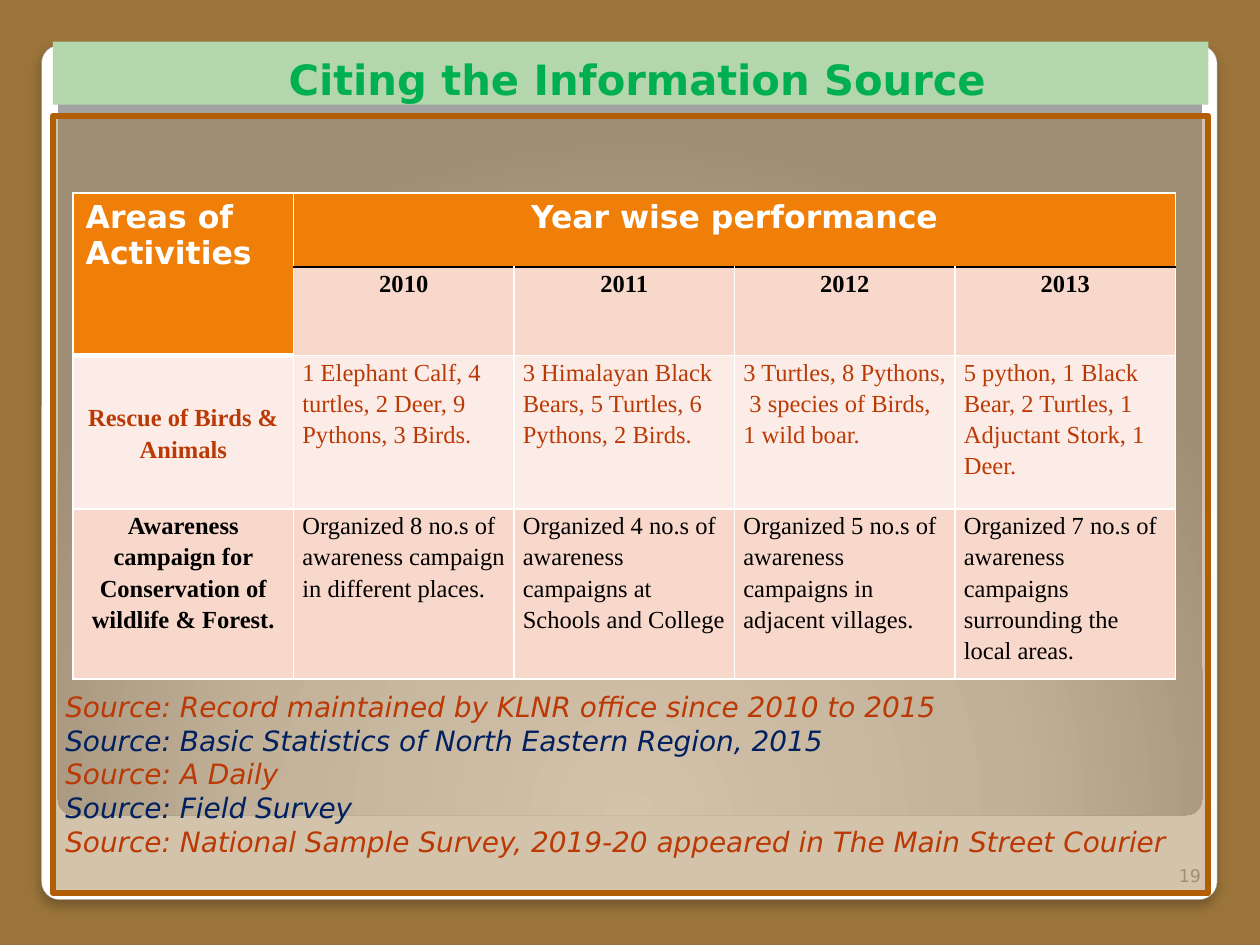
from lxml import etree
from pptx import Presentation
from pptx.dml.color import RGBColor
from pptx.enum import shapes, text
from pptx.oxml import parse_xml
from pptx.oxml.ns import nsdecls, qn
from pptx.util import Inches, Pt

BROWN = RGBColor(0x9A, 0x74, 0x3A)
WHITE = RGBColor(0xFF, 0xFF, 0xFF)
BLACK = RGBColor(0, 0, 0)
GRAY = RGBColor(0xA4, 0xA4, 0xA4)
NUMBER = RGBColor(0xA8, 0xA4, 0x9B)
MINT = RGBColor(0xB3, 0xD6, 0xAC)
GREEN = RGBColor(0x00, 0xB0, 0x50)
FRAME = RGBColor(0xB2, 0x5E, 0x07)
ORANGE = RGBColor(0xF0, 0x7F, 0x09)
PEACH = RGBColor(0xF9, 0xD8, 0xCC)
PALE = RGBColor(0xFC, 0xEC, 0xE7)
RUST = RGBColor(0xBB, 0x39, 0x05)
NAVY = RGBColor(0x00, 0x20, 0x60)
SANS, SERIF = "DejaVu Sans", "Times New Roman"
CENTER, LEFT = text.PP_ALIGN.CENTER, text.PP_ALIGN.LEFT

YEARS = ["2010", "2011", "2012", "2013"]
RESCUE = [
    "Rescue of Birds & Animals",
    "1 Elephant Calf, 4 turtles, 2 Deer, 9 Pythons, 3 Birds.",
    "3 Himalayan Black Bears, 5 Turtles, 6 Pythons, 2 Birds.",
    "3 Turtles, 8 Pythons,  3 species of Birds,  1 wild boar.",
    "5 python, 1 Black Bear, 2 Turtles, 1 Adjuctant Stork, 1 Deer.",
]
AWARENESS = [
    "Awareness campaign for Conservation of wildlife & Forest.",
    "Organized 8 no.s of awareness campaign in different places.",
    "Organized 4 no.s of awareness campaigns at Schools and College",
    "Organized 5 no.s of  awareness campaigns in adjacent villages.",
    "Organized 7 no.s of  awareness campaigns surrounding the local areas.",
]
SOURCES = [
    "Source: Record maintained by KLNR office since 2010 to 2015",
    "Source: Basic Statistics of North Eastern Region, 2015",
    "Source: A Daily",
    "Source: Field Survey",
    "Source: National Sample Survey, 2019-20 appeared in The Main Street Courier",
]


def set_all(obj, **values):
    for name, value in values.items():
        setattr(obj, name, value)


def write(p, words, color, align=LEFT, spacing=None, **font):
    r = p.add_run()
    r.text = words
    set_all(p, alignment=align, line_spacing=spacing)
    set_all(r.font, **font)
    r.font.color.rgb = color


def inset(obj, left, top, right, bottom):
    set_all(obj, margin_left=Inches(left), margin_top=Inches(top),
            margin_right=Inches(right), margin_bottom=Inches(bottom))


def add_box(slide, kind, box, fill, line=None, width=0):
    sp = slide.shapes.add_shape(kind, *map(Inches, box))
    sp.shadow.inherit = False
    sp.fill.solid()
    sp.fill.fore_color.rgb = fill
    if line is None:
        sp.line.fill.background()
    else:
        sp.line.color.rgb = line
        sp.line.width = Pt(width)
    return sp


def add_cards(slide):
    rounded = shapes.MSO_SHAPE.ROUNDED_RECTANGLE
    outer = add_box(slide, rounded, (0.33, 0.36, 9.33, 6.78), WHITE, GRAY, 0.16)
    inner = add_box(slide, rounded, (0.46, 0.47, 9.08, 6), WHITE)
    for sp in (outer, inner):
        sp.adjustments[0] = 0.021
    effects = outer._element.spPr.find(qn("a:effectLst"))
    effects.append(parse_xml(
        f'<a:outerShdw {nsdecls("a")} blurRad="76200" dist="50800" dir="5400000">'
        '<a:srgbClr val="000000"><a:alpha val="25000"/></a:srgbClr></a:outerShdw>'))
    stops = "".join(
        f'<a:gs pos="{pos}000"><a:srgbClr val="{color}"/></a:gs>'
        for pos, color in ((0, "FFFFFF"), (55, "E1E1E1"), (100, "A2A2A2")))
    solid = inner._element.spPr.find(qn("a:solidFill"))
    solid.getparent().replace(solid, parse_xml(
        f'<a:gradFill {nsdecls("a")} rotWithShape="1"><a:gsLst>{stops}</a:gsLst>'
        '<a:path path="circle"><a:fillToRect l="50000" t="175000" r="50000" '
        'b="-75000"/></a:path></a:gradFill>'))


def add_title(slide):
    sp = slide.shapes.title
    slide.shapes._spTree.append(sp._element)
    set_all(sp, left=Inches(0.42), top=Inches(0.33),
            width=Inches(9.17), height=Inches(0.5))
    sp.fill.solid()
    sp.fill.fore_color.rgb = MINT
    tf = sp.text_frame
    set_all(tf, word_wrap=True, auto_size=text.MSO_AUTO_SIZE.NONE,
            vertical_anchor=text.MSO_ANCHOR.TOP)
    inset(tf, 0.2, 0.1, 0.1, 0.05)
    p = tf.paragraphs[0]
    p.space_before = Pt(2.5)
    write(p, "Citing the Information Source", GREEN, CENTER,
          name=SANS, size=Pt(23.8), bold=True)


def add_number(slide):
    tf = slide.shapes.add_textbox(*map(Inches, (9.13, 6.68, 0.5, 0.4))).text_frame
    set_all(tf, word_wrap=True, vertical_anchor=text.MSO_ANCHOR.BOTTOM)
    write(tf.paragraphs[0], "19", NUMBER, text.PP_ALIGN.RIGHT,
          name=SANS, size=Pt(10))


def add_sources(slide):
    sp = add_box(slide, shapes.MSO_SHAPE.RECTANGLE, (0.42, 0.92, 9.17, 6.17),
                 BROWN, FRAME, 3.35)
    color = sp._element.spPr.find(qn("a:solidFill"))[0]
    etree.SubElement(color, qn("a:alpha")).set("val", "43000")
    tf = sp.text_frame
    set_all(tf, word_wrap=True, vertical_anchor=text.MSO_ANCHOR.BOTTOM)
    inset(tf, 0.1, 0.05, 0.1, 0.28)
    for i, source in enumerate(SOURCES):
        p = tf.add_paragraph() if i else tf.paragraphs[0]
        write(p, source, NAVY if i % 2 else RUST, spacing=Pt(19.3),
              name=SANS, size=Pt(16), italic=True)


def set_borders(cell, **special):
    tcPr = cell._tc.get_or_add_tcPr()
    for i, side in enumerate("LRTB"):
        color, width = special.get(side, (WHITE, 1))
        tcPr.insert(i, parse_xml(
            f'<a:ln{side} {nsdecls("a")} w="{Pt(width)}"><a:solidFill>'
            f'<a:srgbClr val="{color}"/></a:solidFill></a:ln{side}>'))


def fill_cell(cell, words, fill, color, align, **font):
    cell.fill.solid()
    cell.fill.fore_color.rgb = fill
    write(cell.text_frame.paragraphs[0], words, color, align, **font)


def add_body_cell(cell, words, fill, color, heading):
    inset(cell, 0.07, 0, 0.07, 0)
    fill_cell(cell, words, fill, color, CENTER if heading else LEFT,
              spacing=1.15, name=SERIF, size=Pt(14), bold=heading)


def add_performance_table(slide):
    table = slide.shapes.add_table(
        4, 5, *map(Inches, (0.58, 1.53, 8.75, 3.84))).table
    for column in table.columns:
        column.width = Inches(1.75)
    for row, height in zip(table.rows, (0.59, 0.68, 1.22, 1.35)):
        row.height = Inches(height)
    for r in range(4):
        for c in range(5):
            special = {}
            if c and r < 2:
                special["TB"[r == 0]] = (BLACK, 1)
            elif r < 2:
                special["B"] = (WHITE, 3)
            set_borders(table.cell(r, c), **special)
    table.cell(0, 0).merge(table.cell(1, 0))
    table.cell(0, 1).merge(table.cell(0, 4))
    for c, words, align in ((0, "Areas of Activities", LEFT),
                            (1, "Year wise performance", CENTER)):
        fill_cell(table.cell(0, c), words, ORANGE, WHITE, align,
                  name=SANS, size=Pt(18), bold=True)
    for c, year in enumerate(YEARS, 1):
        add_body_cell(table.cell(1, c), year, PEACH, BLACK, True)
    for r, entries, fill, color in ((2, RESCUE, PALE, RUST),
                                    (3, AWARENESS, PEACH, BLACK)):
        for c, words in enumerate(entries):
            add_body_cell(table.cell(r, c), words, fill, color, c == 0)
    table.cell(2, 0).vertical_anchor = text.MSO_ANCHOR.MIDDLE


def main():
    prs = Presentation()
    set_all(prs, slide_width=Inches(10), slide_height=Inches(7.5))
    slide = prs.slides.add_slide(prs.slide_layouts[5])
    slide.background.fill.solid()
    slide.background.fill.fore_color.rgb = BROWN
    add_cards(slide)
    add_title(slide)
    add_number(slide)
    add_sources(slide)
    add_performance_table(slide)
    prs.save("out.pptx")


if __name__ == "__main__":
    main()
